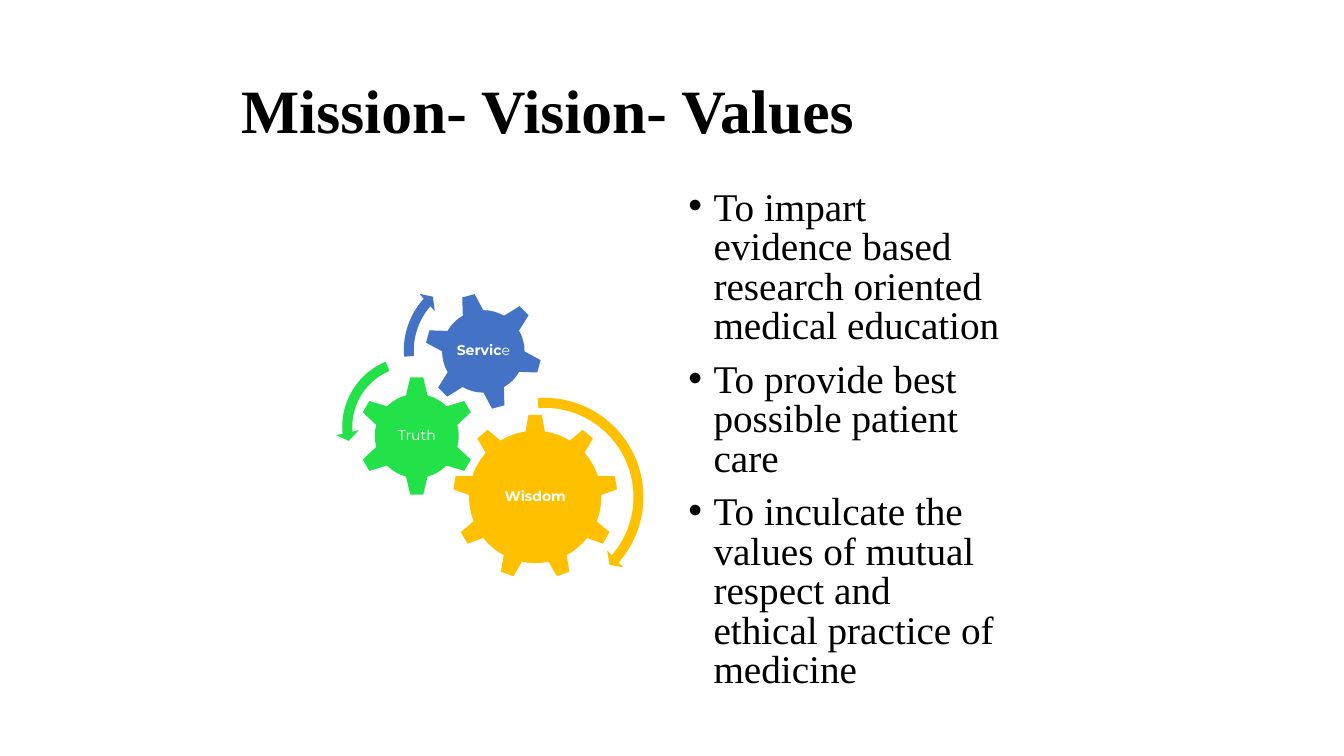
import pptx
import pptx.dml.color
import pptx.enum.shapes
import pptx.enum.text
import pptx.oxml.ns
import pptx.util
from lxml import etree

Pt = pptx.util.Pt
RGB = pptx.dml.color.RGBColor
SHAPE = pptx.enum.shapes.MSO_SHAPE
ANCHOR = pptx.enum.text.MSO_ANCHOR
ALIGN = pptx.enum.text.PP_ALIGN

TITLE = "Mission- Vision- Values"
GOALS = [
    "To impart evidence based research oriented medical education",
    "To provide best possible patient care",
    "To inculcate the values of mutual respect and ethical practice of medicine",
]
# Centres, sizes and boxes are in points; label runs are (text, bold).
GEARS = [
    {"runs": [("Wisdom", True)], "color": "gold", "kind": SHAPE.GEAR_9,
     "center": (382.3, 355), "size": 118.1, "turn": 0, "label": (70.6, 60.5)},
    {"runs": [("Truth", False)], "color": "green", "kind": SHAPE.GEAR_6,
     "center": (297.7, 311.4), "size": 85.7, "turn": 0, "label": (42.5, 42.5)},
    {"runs": [("Servic", True), ("e", False)], "color": "blue", "kind": SHAPE.GEAR_6,
     "center": (345.3, 251), "size": 84.2, "turn": 345, "label": (47.5, 47.5)},
]
# Angles are in degrees: head width, head angle, end and start of the arc.
ARROWS = [
    {"color": "gold", "kind": SHAPE.CIRCULAR_ARROW, "at": (313.2, 279.4), "size": 151.2,
     "thick": 0.047, "angles": (4.98, 41.11, 266.21), "head": 0.055},
    {"color": "green", "kind": SHAPE.LEFT_CIRCULAR_ARROW, "at": (239.8, 249.8), "size": 110.2,
     "thick": 0.065, "angles": (7.17, 174.82, 247.3), "head": 0.075},
    {"color": "blue", "kind": SHAPE.CIRCULAR_ARROW, "at": (283.7, 190.8), "size": 118.8,
     "thick": 0.06, "angles": (6.57, 221.9, 175.14), "head": 0.07},
]
THEME = {
    "gold": RGB.from_string("FFC000"),
    "green": RGB.from_string("23E148"),
    "blue": RGB.from_string("4472C4"),
    "title": {"name": "Times New Roman", "size": Pt(44), "color": RGB(0, 0, 0)},
    "body": {"name": "Times New Roman", "size": Pt(28), "color": RGB(0, 0, 0)},
    "label": {"name": "Montserrat", "size": Pt(10), "color": RGB(255, 255, 255)},
}
ANGLE_UNIT = 0.6  # one degree in the adjustment scale of an arc


def add_run(p, text, style, bold=False):
    r = p.add_run()
    r.text = text
    for name, value in {**THEME[style], "bold": bold}.items():
        if name == "color":
            r.font.color.rgb = value
        else:
            setattr(r.font, name, value)


def add_text_frame(s, box, **formats):
    tf = s.shapes.add_textbox(*map(Pt, box)).text_frame
    for name, value in {"word_wrap": True, **formats}.items():
        setattr(tf, name, value)
    return tf


def set_indent(p, left, first=0, bullet=None):
    pPr = p._p.get_or_add_pPr()
    pPr.set("marL", str(Pt(left)))
    pPr.set("indent", str(Pt(first)))
    if bullet:
        font = etree.SubElement(pPr, pptx.oxml.ns.qn("a:buFont"))
        font.set("typeface", "Arial")
        etree.SubElement(pPr, pptx.oxml.ns.qn("a:buChar")).set("char", bullet)


def add_solid(s, kind, left, top, size, color):
    sp = s.shapes.add_shape(kind, Pt(left), Pt(top), Pt(size), Pt(size))
    sp.shadow.inherit = False
    sp.fill.solid()
    sp.fill.fore_color.rgb = THEME[color]
    sp.line.fill.background()
    return sp


def add_gear(s, gear):
    x, y = gear["center"]
    size = gear["size"]
    sp = add_solid(s, gear["kind"], x - size / 2, y - size / 2, size, gear["color"])
    sp.rotation = gear["turn"]
    w, h = gear["label"]
    inset = Pt(0.7)
    tf = add_text_frame(s, (x - w / 2, y - h / 2, w, h), vertical_anchor=ANCHOR.MIDDLE,
                        margin_left=inset, margin_right=inset,
                        margin_top=inset, margin_bottom=inset)
    p = tf.paragraphs[0]
    p.alignment = ALIGN.CENTER
    p.line_spacing = 0.9
    for text, bold in gear["runs"]:
        add_run(p, text, "label", bold)


def add_arc_arrow(s, arrow):
    sp = add_solid(s, arrow["kind"], *arrow["at"], arrow["size"], arrow["color"])
    angles = [a * ANGLE_UNIT for a in arrow["angles"]]
    for i, value in enumerate([arrow["thick"], *angles, arrow["head"]]):
        sp.adjustments[i] = value


def add_title(s):
    tf = add_text_frame(s, (66.2, 28.8, 828, 104.4), vertical_anchor=ANCHOR.MIDDLE)
    p = tf.paragraphs[0]
    set_indent(p, 99)
    p.line_spacing = 0.9
    add_run(p, TITLE, "title", bold=True)


def add_goals(s):
    tf = add_text_frame(s, (484.6, 131.8, 239, 350.6))
    for i, goal in enumerate(GOALS):
        p = tf.add_paragraph() if i else tf.paragraphs[0]
        set_indent(p, 18, -18, "•")
        p.line_spacing = 0.84
        p.space_before = Pt(10 if i else 0)
        add_run(p, goal, "body")


def main():
    prs = pptx.Presentation()
    prs.slide_width, prs.slide_height = Pt(960), Pt(540)
    s = prs.slides.add_slide(prs.slide_layouts[6])
    for gear in GEARS:
        add_gear(s, gear)
    for arrow in ARROWS:
        add_arc_arrow(s, arrow)
    add_title(s)
    add_goals(s)
    prs.save("out.pptx")


if __name__ == "__main__":
    main()
